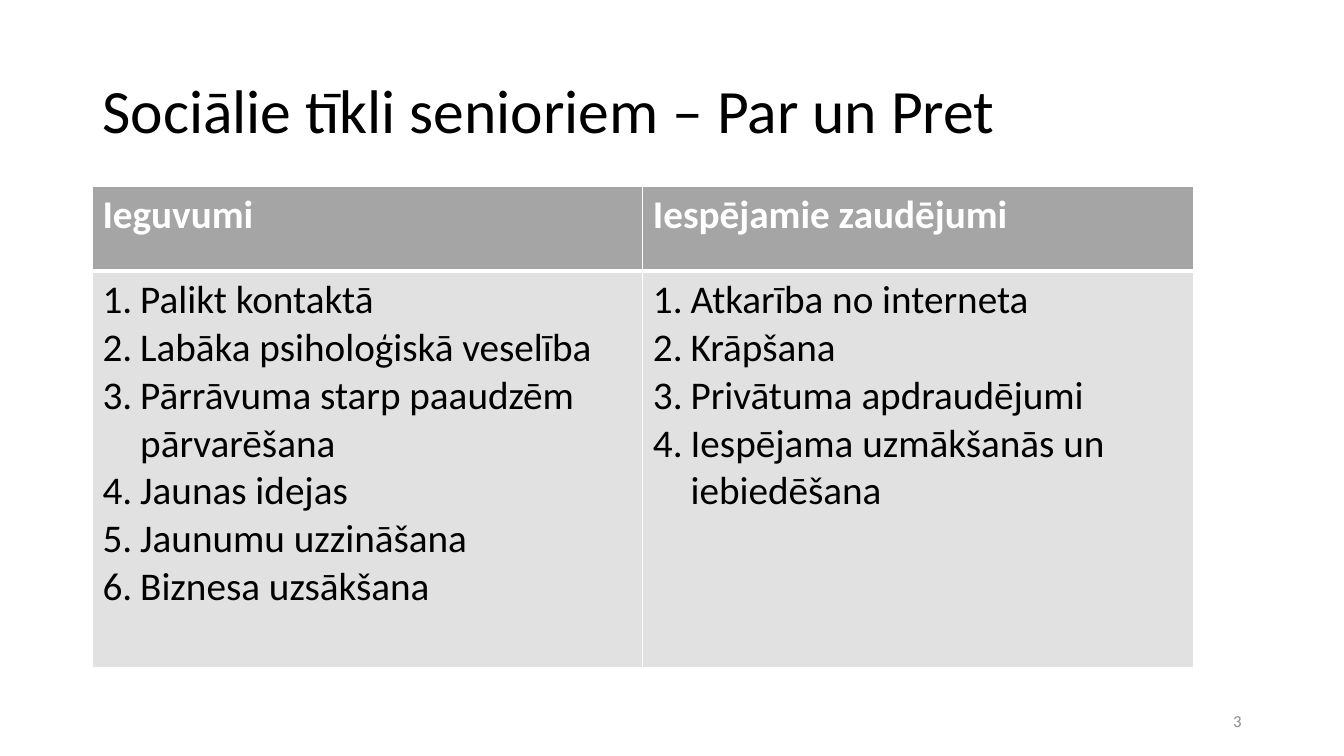
import pptx
import pptx.util
import pptx.dml.color
import pptx.enum.text
import pptx.oxml
import pptx.oxml.ns
from lxml import etree

Cm, Pt = pptx.util.Cm, pptx.util.Pt
ALIGN, ANCHOR = pptx.enum.text.PP_ALIGN, pptx.enum.text.MSO_ANCHOR

# Content
TITLE = "Sociālie tīkli senioriem – Par un Pret"
PAGE_NUMBER = "3"
COLUMNS = [
    ("Ieguvumi", [
        "Palikt kontaktā",
        "Labāka psiholoģiskā veselība",
        "Pārrāvuma starp paaudzēm pārvarēšana",
        "Jaunas idejas",
        "Jaunumu uzzināšana",
        "Biznesa uzsākšana",
    ]),
    ("Iespējamie zaudējumi", [
        "Atkarība no interneta",
        "Krāpšana",
        "Privātuma apdraudējumi",
        "Iespējama uzmākšanās un iebiedēšana",
    ]),
]
COLORS = {"text": "000000", "header_text": "FFFFFF", "header": "A5A5A5",
          "body": "E1E1E1", "border": "FFFFFF", "number": "8C8C8C"}

# Layout in centimetres
LEFT, TABLE_TOP = 2.33, 4.7
COLUMN_WIDTH = 13.87
ROW_HEIGHTS = [2.13, 9.98]
LIST_INDENT = 0.95


def rgb(name):
    return pptx.dml.color.RGBColor.from_string(COLORS[name])


def write(frame, lines, size=28, color="text", bold=False, align=ALIGN.LEFT,
          spacing=None, numbered=False):
    """Fill a text frame with one paragraph per line."""
    for index, line in enumerate(lines):
        paragraph = frame.add_paragraph() if index else frame.paragraphs[0]
        paragraph.alignment = align
        if spacing:
            paragraph.line_spacing = spacing
        if numbered:
            properties = paragraph._p.get_or_add_pPr()
            properties.set("marL", str(Cm(LIST_INDENT)))
            properties.set("indent", str(-Cm(LIST_INDENT)))
            etree.SubElement(properties, pptx.oxml.ns.qn("a:buAutoNum"),
                             type="arabicPeriod")
        run = paragraph.add_run()
        run.text = line
        run.font.name = "Calibri"
        run.font.size = Pt(size)
        run.font.bold = bold
        run.font.color.rgb = rgb(color)


def add_text(left, top, width, height, text, **style):
    box = slide.shapes.add_textbox(Cm(left), Cm(top), Cm(width), Cm(height))
    box.text_frame.word_wrap = True
    box.text_frame.vertical_anchor = ANCHOR.MIDDLE
    write(box.text_frame, [text], **style)


def style_cell(cell, fill, **border_widths):
    """Draw the four borders, then the fill."""
    properties = cell._tc.get_or_add_tcPr()
    for side in "LRTB":
        width = Pt(border_widths.get(side, 1))
        properties.append(pptx.oxml.parse_xml(
            f'<a:ln{side} {pptx.oxml.ns.nsdecls("a")} w="{width}"><a:solidFill>'
            f'<a:srgbClr val="{COLORS["border"]}"/></a:solidFill></a:ln{side}>'))
    cell.fill.solid()
    cell.fill.fore_color.rgb = rgb(fill)


presentation = pptx.Presentation()
presentation.slide_width, presentation.slide_height = Cm(33.87), Cm(19.05)
slide = presentation.slides.add_slide(presentation.slide_layouts[6])

# Title and page number
add_text(LEFT, 1.02, 29.21, 3.68, TITLE, size=44, spacing=0.9)
add_text(23.92, 17.65, 7.62, 1.02, PAGE_NUMBER, size=12, color="number",
         align=ALIGN.RIGHT)

# Table of gains and losses
comparison = slide.shapes.add_table(
    len(ROW_HEIGHTS), len(COLUMNS), Cm(LEFT), Cm(TABLE_TOP),
    Cm(COLUMN_WIDTH * len(COLUMNS)), Cm(sum(ROW_HEIGHTS))).table
for row, height in zip(comparison.rows, ROW_HEIGHTS):
    row.height = Cm(height)
for index, (heading, points) in enumerate(COLUMNS):
    comparison.columns[index].width = Cm(COLUMN_WIDTH)
    header, body = comparison.cell(0, index), comparison.cell(1, index)
    style_cell(header, "header", B=3)
    style_cell(body, "body", T=3)
    write(header.text_frame, [heading], color="header_text", bold=True)
    write(body.text_frame, points, numbered=True)

presentation.save("out.pptx")
